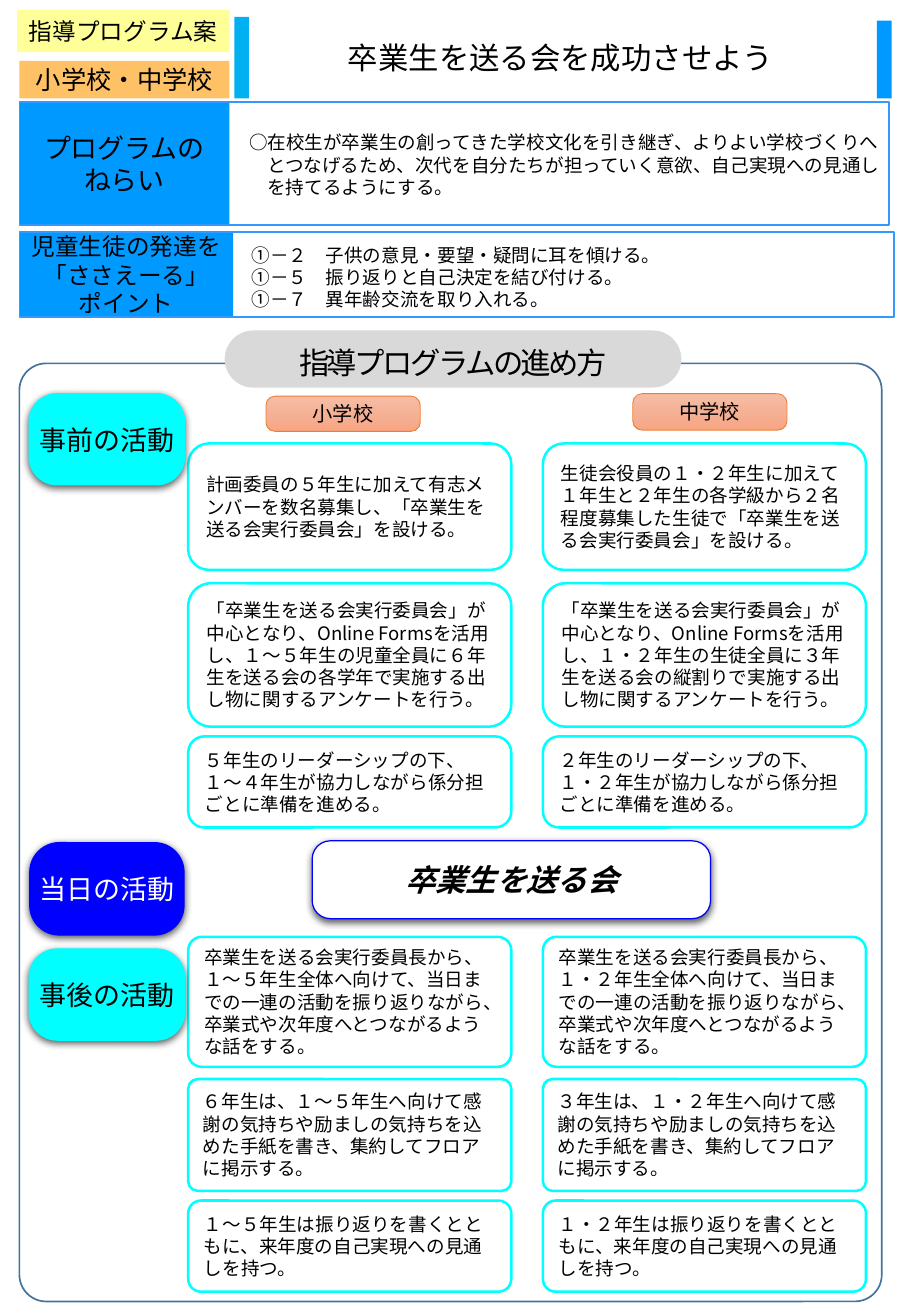
import copy

import pptx
import pptx.dml.color
import pptx.enum.shapes
import pptx.enum.text
import pptx.oxml
import pptx.oxml.ns
import pptx.util
from lxml import etree

Inches = pptx.util.Inches
RGBColor = pptx.dml.color.RGBColor
SHAPE = pptx.enum.shapes.MSO_SHAPE
ALIGN = pptx.enum.text.PP_ALIGN
ANCHOR = pptx.enum.text.MSO_ANCHOR
qn = pptx.oxml.ns.qn

BLACK = RGBColor(0x00, 0x00, 0x00)
WHITE = RGBColor(0xFF, 0xFF, 0xFF)
SKY = RGBColor(0x00, 0x99, 0xFF)
SKY_EDGE = RGBColor(0x33, 0x99, 0xFF)
CYAN = RGBColor(0x00, 0xFF, 0xFF)
BLUE = RGBColor(0x00, 0x00, 0xFF)
TURQUOISE = RGBColor(0x00, 0xB0, 0xF0)
STEEL = RGBColor(0x43, 0x73, 0x9E)
GREY = RGBColor(0xD9, 0xD9, 0xD9)
YELLOW = RGBColor(0xFF, 0xFF, 0x99)
ORANGE = RGBColor(0xFF, 0x99, 0x00)
CORAL_EDGE = RGBColor(0xED, 0x7D, 0x31)
CORAL_LIGHT = RGBColor(0xF7, 0xBD, 0xA5)
CORAL = RGBColor(0xF5, 0xB1, 0x96)
CORAL_DARK = RGBColor(0xF8, 0xA5, 0x82)

CJK = "Noto Sans CJK JP"
LATIN = "Calibri"


class Handout:
    """Holds the current slide and the shared style of its parts."""

    def __init__(self, slide):
        self.slide = slide

    def set_text(self, frame, lines, size, color=BLACK, font=CJK, align=ALIGN.CENTER):
        frame.text = "\n".join(lines)
        frame.vertical_anchor = ANCHOR.MIDDLE
        for paragraph in frame.paragraphs:
            paragraph.alignment = align
            paragraph.font.size = pptx.util.Pt(size)
            paragraph.font.name = font
            paragraph.font.color.rgb = color
            etree.SubElement(paragraph.font._rPr, qn("a:ea")).set("typeface", CJK)
        return frame.paragraphs

    def place(self, shape, box):
        shape.left, shape.top, shape.width, shape.height = map(Inches, box)

    def heading(self, text, box):
        title = self.slide.shapes.title
        self.place(title, box)
        title.text_frame.word_wrap = True
        title.text_frame.auto_size = pptx.enum.text.MSO_AUTO_SIZE.NONE
        self.set_text(title.text_frame, [text], 18)

    def body(self, index, lines, box, hanging=0):
        holder = self.slide.placeholders[index]
        self.place(holder, box)
        frame = holder.text_frame
        frame.word_wrap = True
        frame.auto_size = pptx.enum.text.MSO_AUTO_SIZE.NONE
        for number, paragraph in enumerate(self.set_text(frame, lines, 11, align=ALIGN.LEFT)):
            properties = paragraph._p.get_or_add_pPr()
            properties.set("marL", str(Inches(hanging)))
            properties.set("indent", str(0 if number else -Inches(hanging)))
            properties.insert_element_before(
                pptx.oxml.parse_xml(f'<a:buNone {pptx.oxml.ns.nsdecls("a")}/>'), "a:defRPr")
            paragraph.space_before = pptx.util.Pt(0)
        return frame

    def block(self, box, fill=None, edge=None, weight=1, corner=None):
        kind = SHAPE.RECTANGLE if corner is None else SHAPE.ROUNDED_RECTANGLE
        shape = self.slide.shapes.add_shape(kind, *map(Inches, box))
        shape.shadow.inherit = False
        if corner is not None:
            shape.adjustments[0] = corner
        if fill is None:
            shape.fill.background()
        else:
            shape.fill.solid()
            shape.fill.fore_color.rgb = fill
        if edge is None:
            shape.line.fill.background()
        else:
            shape.line.color.rgb = edge
            shape.line.width = pptx.util.Pt(weight)
        return shape

    def label(self, lines, box, size, font=CJK, color=BLACK, **look):
        shape = self.block(box, **look)
        shape.text_frame.word_wrap = False
        self.set_text(shape.text_frame, lines, size, color, font)
        return shape

    def raised(self, text, box, size, **look):
        shape = self.label([text], box, size, **look)
        effects = shape._element.spPr.find(qn("a:effectLst"))
        shadow = etree.SubElement(effects, qn("a:outerShdw"), blurRad="57150",
                                  dist="19050", dir="5400000", rotWithShape="0")
        tint = etree.SubElement(shadow, qn("a:srgbClr"), val="000000")
        etree.SubElement(tint, qn("a:alpha"), val="63000")
        return shape

    def school(self, text, box):
        tag = self.label([text], box, 12, edge=CORAL_EDGE, weight=0.5, corner=0.258)
        tag.fill.gradient()
        tag.fill.gradient_angle = 270
        first, last = tag.fill.gradient_stops
        first.color.rgb, last.color.rgb = CORAL_LIGHT, CORAL_DARK
        middle = copy.deepcopy(first._gs)
        middle.set("pos", "50000")
        middle[0].set("val", str(CORAL))
        first._gs.addnext(middle)

    def card(self, text, box, corner):
        shape = self.block(box, WHITE, CYAN, 1.5, corner)
        shape.text_frame.word_wrap = True
        self.set_text(shape.text_frame, [text], 11, align=ALIGN.LEFT)


# Card rows: top, height, corner, text for each school
CARD_LEFTS = (1.55, 4.47)
CARD_WIDTH = 2.66
CARD_ROWS = [
    (3.65, 1.04, 0.163,
     "計画委員の５年生に加えて有志メンバーを数名募集し、「卒業生を送る会実行委員会」を設ける。",
     "生徒会役員の１・２年生に加えて１年生と２年生の各学級から２名程度募集した生徒で「卒業生を送る会実行委員会」を設ける。"),
    (4.8, 1.18, 0.159,
     "「卒業生を送る会実行委員会」が中心となり、Online Formsを活用し、１～５年生の児童全員に６年生を送る会の各学年で実施する出し物に関するアンケートを行う。",
     "「卒業生を送る会実行委員会」が中心となり、Online Formsを活用し、１・２年生の生徒全員に３年生を送る会の縦割りで実施する出し物に関するアンケートを行う。"),
    (6.06, 0.75, 0.177,
     "５年生のリーダーシップの下、１～４年生が協力しながら係分担ごとに準備を進める。",
     "２年生のリーダーシップの下、１・２年生が協力しながら係分担ごとに準備を進める。"),
    (7.71, 1.07, 0.104,
     "卒業生を送る会実行委員長から、１～５年生全体へ向けて、当日までの一連の活動を振り返りながら、卒業式や次年度へとつながるような話をする。",
     "卒業生を送る会実行委員長から、１・２年生全体へ向けて、当日までの一連の活動を振り返りながら、卒業式や次年度へとつながるような話をする。"),
    (8.88, 0.92, 0.085,
     "６年生は、１～５年生へ向けて感謝の気持ちや励ましの気持ちを込めた手紙を書き、集約してフロアに掲示する。",
     "３年生は、１・２年生へ向けて感謝の気持ちや励ましの気持ちを込めた手紙を書き、集約してフロアに掲示する。"),
    (9.88, 0.75, 0.14,
     "１～５年生は振り返りを書くとともに、来年度の自己実現への見通しを持つ。",
     "１・２年生は振り返りを書くとともに、来年度の自己実現への見通しを持つ。"),
]


def main():
    deck = pptx.Presentation()
    deck.slide_width, deck.slide_height = Inches(7.5), Inches(10.83)
    page = Handout(deck.slides.add_slide(deck.slide_layouts[3]))

    # Header
    page.label(["指導プログラム案"], (0.14, 0.08, 1.75, 0.35), 14, LATIN, fill=YELLOW)
    schools = page.label(["小学校・中学校"], (0.16, 0.5, 1.73, 0.31), 15, LATIN, fill=ORANGE)
    tint = schools._element.spPr.find(qn("a:solidFill"))[0]
    etree.SubElement(tint, qn("a:alpha"), val="60000")
    page.block((1.93, 0.14, 0.12, 0.67), TURQUOISE)
    page.block((7.22, 0.17, 0.12, 0.64), SKY)
    page.heading("卒業生を送る会を成功させよう", (1.64, 0.22, 5.95, 0.5))

    # Aim of the program
    page.label(["プログラムの", "ねらい"], (0.16, 0.85, 1.73, 1), 16, LATIN, fill=SKY)
    page.block((0.16, 0.84, 7.16, 1.01), edge=SKY_EDGE)
    aim = page.body(1, ["○在校生が卒業生の創ってきた学校文化を引き継ぎ、よりよい学校づくりへ",
                        "とつなげるため、次代を自分たちが担っていく意欲、自己実現への見通し",
                        "を持てるようにする。"], (1.95, 0.85, 5.43, 1), hanging=0.15)
    aim.vertical_anchor = ANCHOR.TOP
    aim.margin_top = Inches(0.23)

    # Points that support development
    page.label(["児童生徒の発達を", "「ささえーる」", "ポイント"],
               (0.16, 1.91, 1.76, 0.7), 14, LATIN, fill=SKY)
    page.block((0.16, 1.91, 7.2, 0.7), edge=SKY_EDGE)
    page.body(2, ["①－２　子供の意見・要望・疑問に耳を傾ける。",
                  "①－５　振り返りと自己決定を結び付ける。",
                  "①－７　異年齢交流を取り入れる。"], (1.97, 1.97, 5.4, 0.62))

    # Frame of the procedure
    page.block((0.16, 2.99, 7.1, 7.72), edge=STEEL, corner=0.031)
    procedure = page.label(["指導プログラムの進め方"], (1.85, 2.72, 3.76, 0.47), 18,
                           fill=GREY, corner=0.5).text_frame.paragraphs[0]
    procedure.line_spacing = 1.2
    procedure.font._rPr.set("spc", "-150")
    page.school("小学校", (2.19, 3.26, 1.27, 0.29))
    page.school("中学校", (5.21, 3.24, 1.27, 0.3))

    # Cards for both schools
    for top, height, corner, *texts in CARD_ROWS:
        for left, text in zip(CARD_LEFTS, texts):
            page.card(text, (left, top, CARD_WIDTH, height), corner)

    # Stages
    for stage, top in (("事前の活動", 3.24), ("事後の活動", 7.81)):
        page.raised(stage, (0.24, top, 1.28, 0.75), 16,
                    fill=CYAN, edge=CYAN, weight=0.75, corner=0.308)
    page.raised("当日の活動", (0.24, 6.93, 1.28, 0.77), 16, color=WHITE, fill=BLUE, corner=0.322)
    event = page.raised("卒業生を送る会", (2.57, 6.92, 3.28, 0.64), 18,
                        fill=WHITE, edge=BLUE, weight=0.75, corner=0.233)
    event_font = event.text_frame.paragraphs[0].font
    event_font.bold = event_font.italic = True

    deck.save("out.pptx")


if __name__ == "__main__":
    main()
